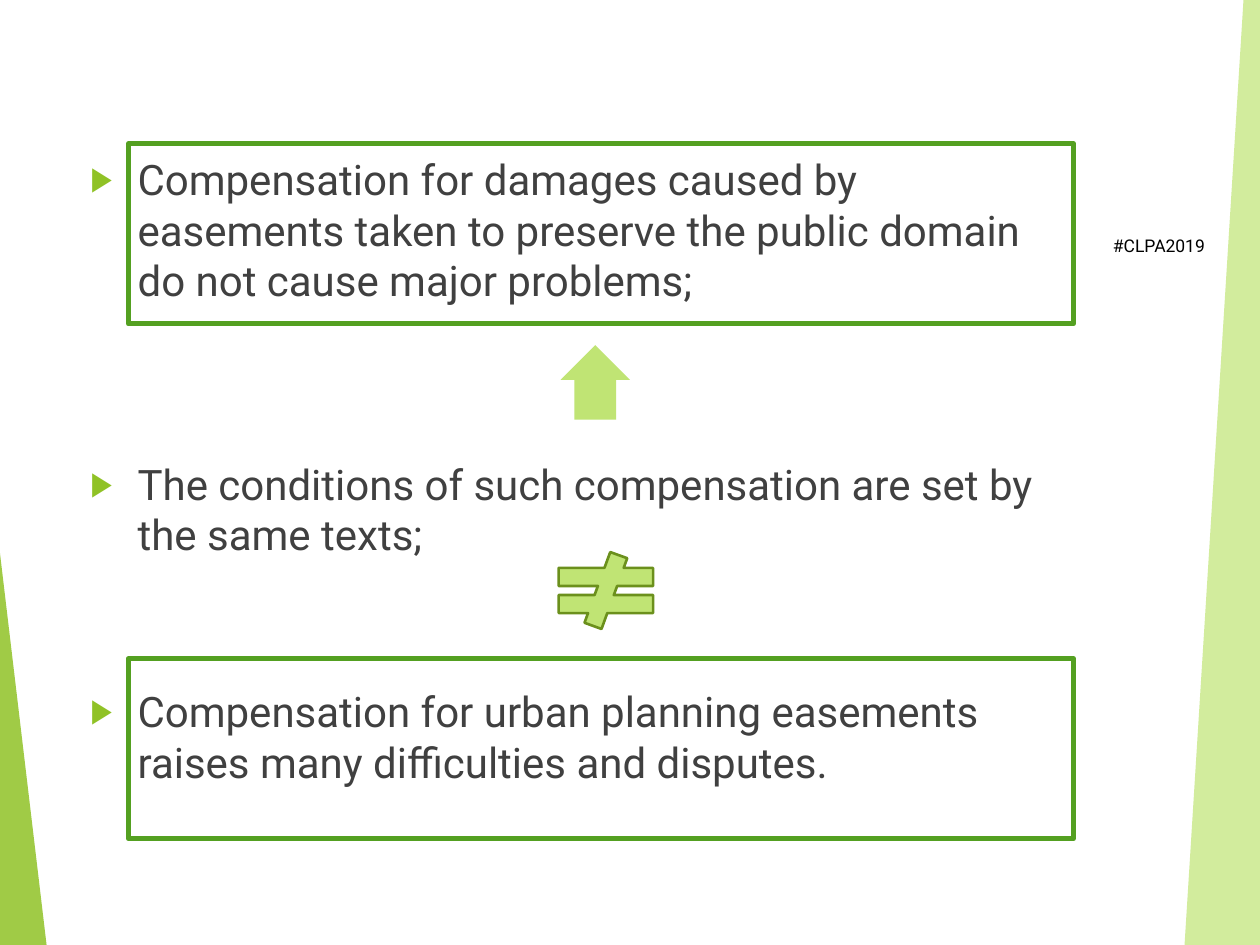
from lxml.etree import SubElement
from pptx import Presentation
from pptx.dml.color import RGBColor
from pptx.enum.shapes import MSO_SHAPE
from pptx.enum.text import MSO_ANCHOR, MSO_AUTO_SIZE, PP_ALIGN
from pptx.oxml.ns import qn
from pptx.util import Cm, Pt

FONT = "Roboto"
BLACK = RGBColor(0x00, 0x00, 0x00)
INK = RGBColor(0x40, 0x40, 0x40)
LEAF = RGBColor(0x90, 0xC2, 0x26)
LIME = RGBColor(0xC0, 0xE4, 0x74)
OLIVE = RGBColor(0x6B, 0x90, 0x1C)
FRAME_GREEN = RGBColor(0x54, 0xA0, 0x21)

POINTS = [
    ("Compensation for damages caused by easements taken to preserve "
     "the public domain do not cause major problems;", 0),
    ("The conditions of such compensation are set by the same texts;", 87.8),
    ("Compensation for urban planning easements raises many difficulties "
     "and disputes.", 72.3),
]
HASHTAG = "\u00a0#CLPA2019"
FRAME_TOPS = [2.9, 13.28]
RIGHT_WEDGE = [(25.07, -0.03), (25.4, -0.03), (25.4, 19.05), (23.88, 19.05)]


def paint(shape, fill=None, opacity=None, line=None, width=1):
    """Set fill, opacity and outline, without shadow."""
    shape.shadow.inherit = False
    if fill is None:
        shape.fill.background()
    else:
        shape.fill.solid()
        shape.fill.fore_color.rgb = fill
    if opacity is not None:
        colour = next(shape._element.iter(qn("a:srgbClr")))
        SubElement(colour, qn("a:alpha"), val=str(opacity * 1000))
    if line is None:
        shape.line.fill.background()
    else:
        shape.line.color.rgb = line
        shape.line.width = Pt(width)


def add_preset(slide, preset, left, top, width, height):
    """Add a preset shape placed in centimetres."""
    return slide.shapes.add_shape(preset, Cm(left), Cm(top), Cm(width), Cm(height))


def add_bullet(paragraph):
    """Give a paragraph a hanging green triangle bullet."""
    properties = paragraph._p.get_or_add_pPr()
    properties.set("marL", str(Cm(0.95)))
    properties.set("indent", str(Cm(-0.95)))
    colour = SubElement(properties, qn("a:buClr"))
    SubElement(colour, qn("a:srgbClr"), val=str(LEAF))
    SubElement(properties, qn("a:buSzPct"), val="80000")
    SubElement(properties, qn("a:buFont"), typeface="Arial")
    SubElement(properties, qn("a:buChar"), char="▶")


def add_words(paragraph, words, size, colour):
    """Add one formatted run."""
    run = paragraph.add_run()
    run.text = words
    run.font.name = FONT
    run.font.size = Pt(size)
    run.font.color.rgb = colour


def add_side_decoration(slide):
    """Draw the two edge wedges and the hashtag."""
    corners = [(Cm(x), Cm(y)) for x, y in RIGHT_WEDGE]
    outline = slide.shapes.build_freeform(*corners[0])
    outline.add_line_segments(corners[1:], close=True)
    paint(outline.convert_to_shape(), LIME, 70)

    left_wedge = add_preset(slide, MSO_SHAPE.ISOSCELES_TRIANGLE, 0, 11.15, 0.94, 7.9)
    left_wedge.adjustments[0] = 0
    paint(left_wedge, LEAF, 85)

    hashtag = slide.shapes.add_textbox(Cm(22.1), Cm(4.62), Cm(2.54), Cm(0.71))
    hashtag.text_frame.word_wrap = True
    add_words(hashtag.text_frame.paragraphs[0], HASHTAG, 10, BLACK)


def fill_body(body):
    """Place the body and write its bulleted points."""
    body.left, body.top, body.width, body.height = Cm(1.57), Cm(2.97), Cm(20.24), Cm(12.5)
    frame = body.text_frame
    frame.word_wrap = True
    frame.auto_size = MSO_AUTO_SIZE.NONE
    frame.vertical_anchor = MSO_ANCHOR.TOP
    for index, (point, gap) in enumerate(POINTS):
        paragraph = frame.add_paragraph() if index else frame.paragraphs[0]
        paragraph.alignment = PP_ALIGN.LEFT
        paragraph.space_before = Pt(gap)
        add_bullet(paragraph)
        add_words(paragraph, point, 24, INK)


def main():
    """Build the slide on compensation for easements."""
    deck = Presentation()
    deck.slide_width, deck.slide_height = Cm(25.4), Cm(19.05)
    slide = deck.slides.add_slide(deck.slide_layouts[1])
    title = slide.shapes.title._element
    title.getparent().remove(title)

    add_side_decoration(slide)
    fill_body(slide.placeholders[1])

    up_arrow = add_preset(slide, MSO_SHAPE.UP_ARROW, 11.3, 6.96, 1.4, 1.5)
    up_arrow.adjustments[0] = 0.6
    paint(up_arrow, LIME)

    not_equal = add_preset(slide, MSO_SHAPE.MATH_NOT_EQUAL, 10.92, 11.13, 2.59, 1.55)
    paint(not_equal, LIME, line=OLIVE, width=1.5)

    for top in FRAME_TOPS:
        frame = add_preset(slide, MSO_SHAPE.RECTANGLE, 2.59, top, 19.05, 3.63)
        paint(frame, line=FRAME_GREEN, width=3)

    deck.save("out.pptx")


if __name__ == "__main__":
    main()
